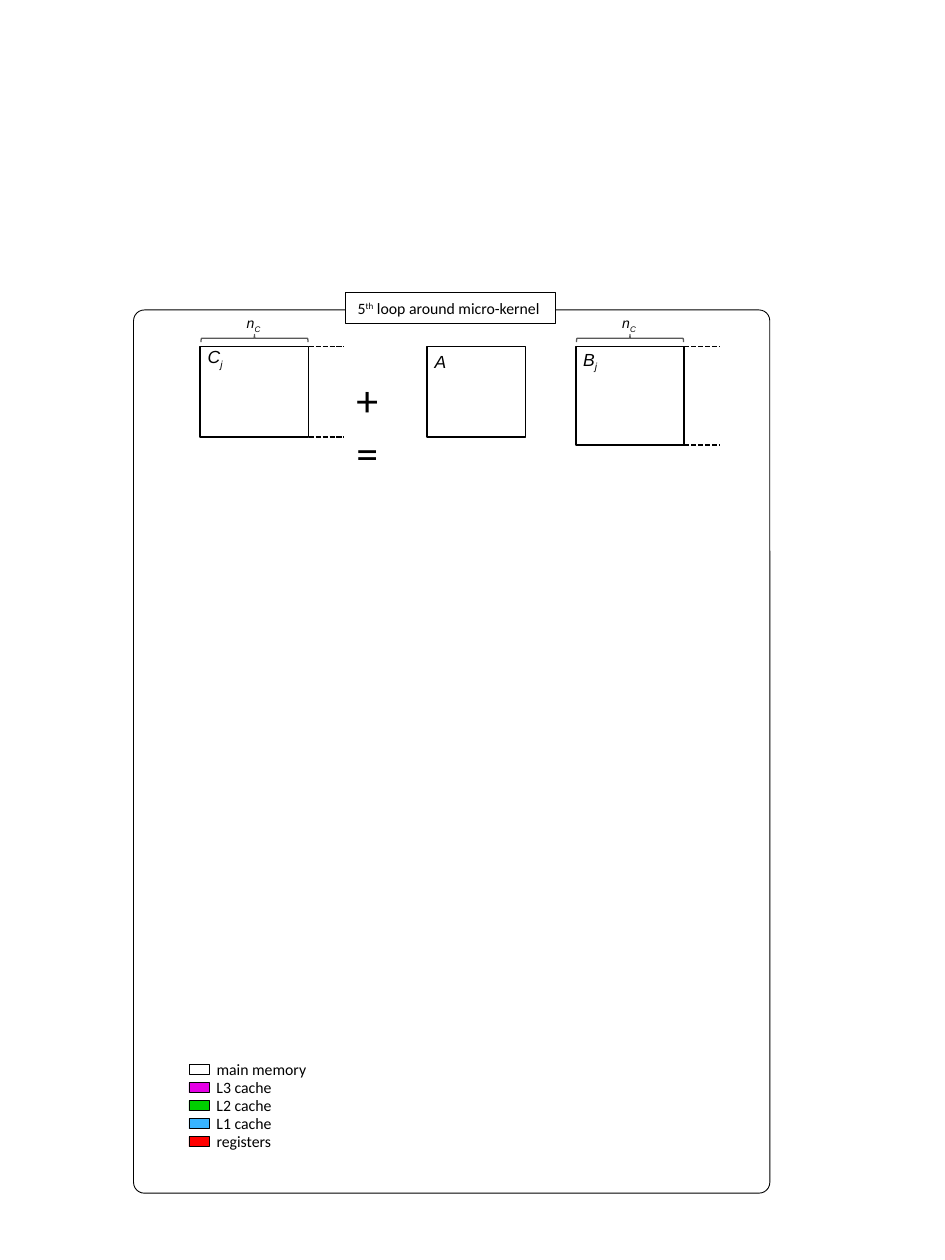
from lxml import etree
from pptx import Presentation
from pptx.dml.color import RGBColor
from pptx.enum.dml import MSO_LINE
from pptx.enum.shapes import MSO_CONNECTOR, MSO_SHAPE
from pptx.enum.text import MSO_ANCHOR, MSO_AUTO_SIZE, PP_ALIGN
from pptx.oxml.ns import qn
from pptx.util import Inches, Pt

RECT, ROUND, BRACE = MSO_SHAPE.RECTANGLE, MSO_SHAPE.ROUNDED_RECTANGLE, MSO_SHAPE.RIGHT_BRACE
STRAIGHT, DASH = MSO_CONNECTOR.STRAIGHT, MSO_LINE.SQUARE_DOT
LEFT, MIDDLE, GROW = PP_ALIGN.LEFT, MSO_ANCHOR.MIDDLE, MSO_AUTO_SIZE.SHAPE_TO_FIT_TEXT

COLORS = {"ink": "000000", "brace": "595959", "main": "FFFFFF", "l3": "E500E5",
          "l2": "00CE00", "l1": "38B4FF", "regs": "FF0000"}
LEGEND = [("main memory", "main", 0.92), ("L3 cache", "l3", 0.64), ("L2 cache", "l2", 0.64),
          ("L1 cache", "l1", 0.64), ("registers", "regs", 0.65)]

TOP = 2.75              # shared upper edge of the matrices
PANEL = 0.86            # width of a column panel
TAIL = 0.28             # length of the dashed edges
PITCH = 0.1425          # row height of the legend
SUB, SUPER = -25000, 30000

MATH = {"name": "Arial", "size": Pt(10), "italic": True}
SMALL = {**MATH, "size": Pt(8)}
PLAIN = {"name": "Calibri", "size": Pt(9)}
SIGN = {**PLAIN, "size": Pt(25)}


def color(key):
    return RGBColor.from_string(COLORS[key])


def add_box(slide, kind, area, width, fill=None, ink="ink"):
    box = slide.shapes.add_shape(kind, *map(Inches, area))
    box.shadow.inherit = False
    if fill:
        box.fill.solid()
        box.fill.fore_color.rgb = color(fill)
    else:
        box.fill.background()
    box.line.color.rgb = color(ink)
    box.line.width = Pt(width)
    return box


def write(frame, parts, style):
    """Fill a frame with (text, baseline shift) parts."""
    para = frame.paragraphs[0]
    para.alignment = LEFT
    for text, shift in parts:
        run = para.add_run()
        run.text = text
        for name, value in style.items():
            setattr(run.font, name, value)
        run.font.color.rgb = color("ink")
        if shift:
            run.font._element.set("baseline", str(shift))


def add_text(slide, area, parts, style, wrap=False):
    frame = slide.shapes.add_textbox(*map(Inches, area)).text_frame
    frame.word_wrap = wrap
    frame.auto_size = GROW
    write(frame, parts, style)


def add_dash(slide, left, y):
    line = slide.shapes.add_connector(
        STRAIGHT, *map(Inches, (left, y, left + TAIL, y)))
    line.line.color.rgb = color("ink")
    line.line.width = Pt(1)
    line.line.dash_style = DASH
    etree.SubElement(line._element.spPr, qn("a:effectLst"))


def add_matrix(slide, left, size, parts, nudge):
    add_box(slide, RECT, (left, TOP, *size), 1, "main")
    add_text(slide, (left - 0.04, TOP + nudge, 0.32, 0.27), parts, MATH)


def add_panel(slide, left, height, name, nudge):
    """Matrix cut into columns, with its width brace and dashed rest."""
    add_matrix(slide, left, (PANEL, height), [(name, 0), ("j", SUB)], nudge)
    for y in (TOP, TOP + height):
        add_dash(slide, left + PANEL, y)
    mid = left + PANEL / 2
    brace = add_box(slide, BRACE, (mid - 0.03, 2.26, 0.06, 0.85), 0.75, ink="brace")
    brace.rotation = 270
    add_text(slide, (mid - 0.16, 2.45, 0.33, 0.24), [("n", 0), ("C", SUB)], SMALL)


def add_legend(slide):
    for row, (text, fill, width) in enumerate(LEGEND):
        y = 8.45 + row * PITCH
        add_box(slide, RECT, (1.5, y, 0.16, 0.08), 0.5, fill)
        add_text(slide, (1.62, y - 0.085, width, 0.25), [(text, 0)], PLAIN)


def add_label(slide):
    label = add_box(slide, RECT, (2.74, 2.32, 1.67, 0.25), 0.75, "main")
    frame = label.text_frame
    frame.word_wrap = True
    frame.vertical_anchor = MIDDLE
    write(frame, [("5", 0), ("th", SUPER), (" loop around micro-kernel", 0)], PLAIN)


def main():
    deck = Presentation()
    deck.slide_width, deck.slide_height = Inches(7.5), Inches(10)
    slide = deck.slides.add_slide(deck.slide_layouts[6])

    border = add_box(slide, ROUND, (1.06, 2.46, 5.05, 7.01), 0.5)
    border.adjustments[0] = 0.017
    add_label(slide)
    add_panel(slide, 1.59, 0.72, "C", -0.05)
    add_text(slide, (2.73, 2.91, 0.45, 0.4), [("+=", 0)], SIGN, wrap=True)
    add_matrix(slide, 3.39, (0.78, 0.72), [("A", 0)], -0.01)
    add_panel(slide, 4.57, 0.78, "B", -0.03)
    add_legend(slide)
    deck.save("out.pptx")


if __name__ == "__main__":
    main()
